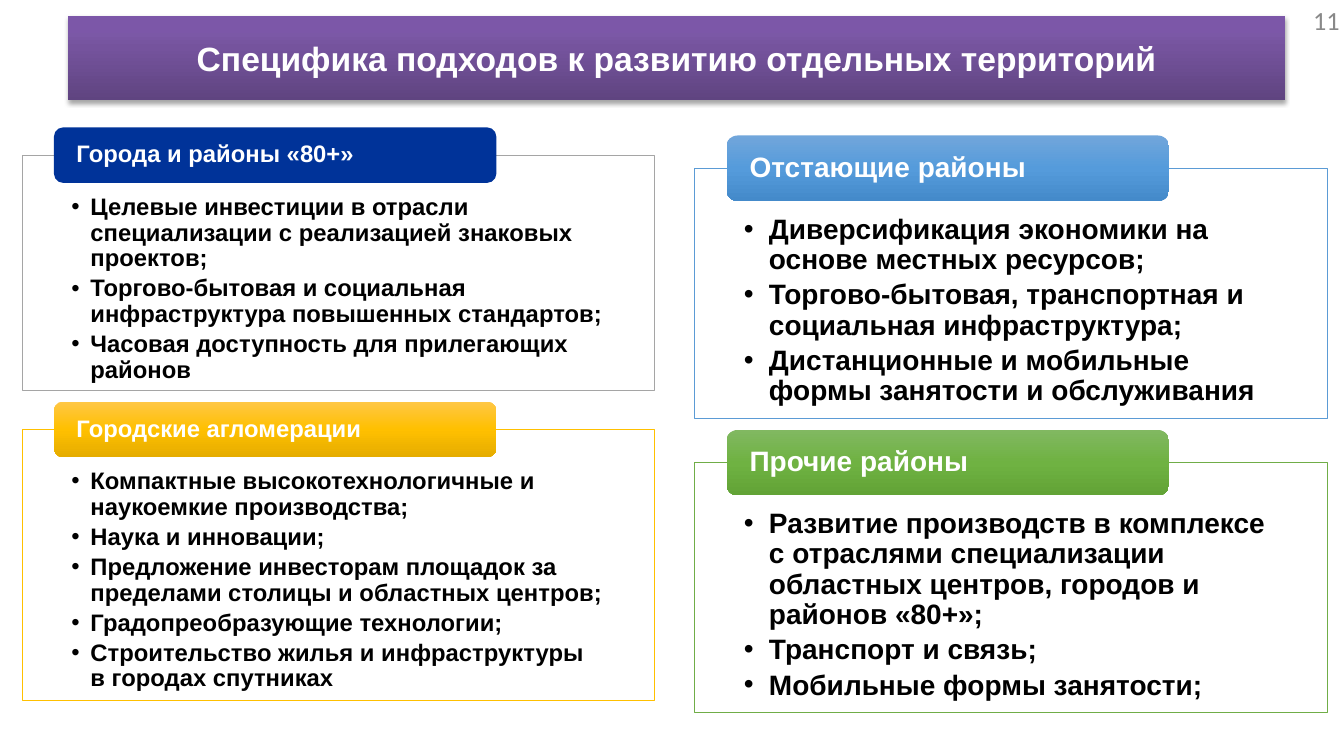
import pptx
import pptx.util
import pptx.dml.color
import pptx.enum.shapes
import pptx.enum.text
import pptx.oxml.ns
from lxml import etree

Cm, Pt = pptx.util.Cm, pptx.util.Pt
RGBColor = pptx.dml.color.RGBColor
SHAPE = pptx.enum.shapes.MSO_SHAPE
ALIGN = pptx.enum.text.PP_ALIGN
ANCHOR = pptx.enum.text.MSO_ANCHOR
qn = pptx.oxml.ns.qn

WHITE = RGBColor(0xFF, 0xFF, 0xFF)
BLACK = RGBColor(0x00, 0x00, 0x00)
NUMBER_GREY = RGBColor(0x89, 0x89, 0x89)
GREY = RGBColor(0xA5, 0xA5, 0xA5)
GOLD = RGBColor(0xFF, 0xC0, 0x00)
BLUE = RGBColor(0x5B, 0x9B, 0xD5)
GREEN = RGBColor(0x70, 0xAD, 0x47)
NAVY = RGBColor(0x00, 0x33, 0x99)
# Gradient stops run from top to bottom: (percent, colour)
PURPLE_FADE = [(0, RGBColor(0x7C, 0x57, 0xA8)), (20, RGBColor(0x7B, 0x58, 0xA6)),
               (37, RGBColor(0x75, 0x53, 0x9D)), (100, RGBColor(0x5F, 0x44, 0x80))]
NAVY_FADE = [(0, NAVY), (100, NAVY)]
GOLD_FADE = [(0, RGBColor(0xFF, 0xC7, 0x46)), (50, GOLD), (100, RGBColor(0xE5, 0xAC, 0x00))]
BLUE_FADE = [(0, RGBColor(0x71, 0xA6, 0xDB)), (50, RGBColor(0x55, 0x9B, 0xDB)),
             (100, RGBColor(0x44, 0x8A, 0xCA))]
GREEN_FADE = [(0, RGBColor(0x81, 0xB8, 0x61)), (50, RGBColor(0x6F, 0xB2, 0x42)),
              (100, RGBColor(0x62, 0xA3, 0x36))]

# One row per column: left, text size, tab height, bullet indent, top inset, panels
# One row per panel: top, height, border, tab stops, heading, bullet points
COLUMNS = [
    (0.56, 17, 1.4, 0.48, 1.0, [
        (3.91, 5.94, GREY, NAVY_FADE, "Города и районы «80+»", [
            "Целевые инвестиции в отрасли специализации с реализацией знаковых проектов;",
            "Торгово-бытовая и социальная инфраструктура повышенных стандартов;",
            "Часовая доступность для прилегающих районов"]),
        (10.82, 6.83, GOLD, GOLD_FADE, "Городские агломерации", [
            "Компактные высокотехнологичные и наукоемкие производства;",
            "Наука и инновации;",
            "Предложение инвесторам площадок за пределами столицы и областных центров;",
            "Градопреобразующие технологии;",
            "Строительство жилья и инфраструктуры в городах спутниках"])]),
    (17.51, 20, 1.65, 0.63, 1.18, [
        (4.24, 6.3, BLUE, BLUE_FADE, "Отстающие районы", [
            "Диверсификация экономики на основе местных ресурсов;",
            "Торгово-бытовая, транспортная и социальная инфраструктура;",
            "Дистанционные и мобильные формы занятости и обслуживания"]),
        (11.66, 6.3, GREEN, GREEN_FADE, "Прочие районы", [
            "Развитие производств в комплексе с отраслями специализации "
            "областных центров, городов и районов «80+»;",
            "Транспорт и связь;",
            "Мобильные формы занятости;"])]),
]
PANEL_WIDTH = 15.93
TAB_WIDTH = 11.15
TAB_OFFSET = 0.8

deck = pptx.Presentation()
deck.slide_width, deck.slide_height = Cm(33.87), Cm(19.05)
page = deck.slides.add_slide(deck.slide_layouts[6])


def add_box(kind, left, top, width, height, stops, insets, anchor):
    """Add a borderless shape filled with one colour or a vertical gradient."""
    box = page.shapes.add_shape(kind, Cm(left), Cm(top), Cm(width), Cm(height))
    box.shadow.inherit = False
    box.line.fill.background()
    if stops[0][1] == stops[-1][1]:
        box.fill.solid()
        box.fill.fore_color.rgb = stops[0][1]
    else:
        box.fill.gradient()
        box.fill.gradient_angle = 270
        stop_list = box._element.spPr.find(qn("a:gradFill")).find(qn("a:gsLst"))
        for old_stop in list(stop_list):
            stop_list.remove(old_stop)
        for percent, colour in stops:
            stop = etree.SubElement(stop_list, qn("a:gs"), pos=str(percent * 1000))
            etree.SubElement(stop, qn("a:srgbClr"), val=str(colour))
    frame = box.text_frame
    frame.word_wrap = True
    frame.vertical_anchor = anchor
    frame.margin_left = frame.margin_right = Cm(insets[0])
    frame.margin_top, frame.margin_bottom = Cm(insets[1]), Cm(insets[2])
    return box


def add_text(para, text, size, colour, align=ALIGN.LEFT, font="Arial", bold=True):
    para.alignment = align
    span = para.add_run()
    span.text = text
    span.font.name, span.font.size, span.font.bold = font, Pt(size), bold
    span.font.color.rgb = colour


title = add_box(SHAPE.RECTANGLE, 1.72, 0.41, 30.66, 2.12, PURPLE_FADE,
                (0.25, 0.13, 0.13), ANCHOR.MIDDLE)
add_text(title.text_frame.paragraphs[0],
         "Специфика подходов к развитию отдельных территорий", 24, WHITE, ALIGN.CENTER)
effects = title._element.spPr.find(qn("a:effectLst"))
shadow = etree.SubElement(effects, qn("a:outerShdw"), blurRad=str(Pt(3.1)),
                          dist=str(Pt(1.8)), dir="5400000", rotWithShape="0")
shade = etree.SubElement(shadow, qn("a:srgbClr"), val=str(BLACK))
etree.SubElement(shade, qn("a:alpha"), val="35000")

number = page.shapes.add_textbox(Cm(25.96), Cm(0), Cm(7.9), Cm(1.02))
number.text_frame.word_wrap = True
number.text_frame.vertical_anchor = ANCHOR.MIDDLE
number.text_frame.margin_left = number.text_frame.margin_right = Cm(0.1)
add_text(number.text_frame.paragraphs[0], "11", 18.7, NUMBER_GREY, ALIGN.RIGHT,
         "Calibri", False)

for left, size, tab_height, indent, top_inset, panels in COLUMNS:
    for top, height, border, tab_stops, heading, points in panels:
        panel = add_box(SHAPE.RECTANGLE, left, top, PANEL_WIDTH, height,
                        [(0, WHITE)], (1.24, top_inset, 0.33), ANCHOR.TOP)
        panel.line.color.rgb = border
        panel.line.width = Pt(0.5)
        frame = panel.text_frame
        for index, point in enumerate(points):
            para = frame.add_paragraph() if index else frame.paragraphs[0]
            add_text(para, point, size, BLACK)
            para.line_spacing = 0.9
            para.space_after = Pt(round(size * 0.18, 1))
            props = para._p.get_or_add_pPr()
            props.set("marL", str(Cm(indent)))
            props.set("indent", str(-Cm(indent)))
            etree.SubElement(props, qn("a:buFont"), typeface="Arial")
            etree.SubElement(props, qn("a:buChar"), char="•")

        tab = add_box(SHAPE.ROUNDED_RECTANGLE, left + TAB_OFFSET, top - tab_height / 2,
                      TAB_WIDTH, tab_height, tab_stops, (0.5, 0, 0), ANCHOR.MIDDLE)
        add_text(tab.text_frame.paragraphs[0], heading, size, WHITE)
        tab.text_frame.paragraphs[0].line_spacing = 0.9

deck.save("out.pptx")
